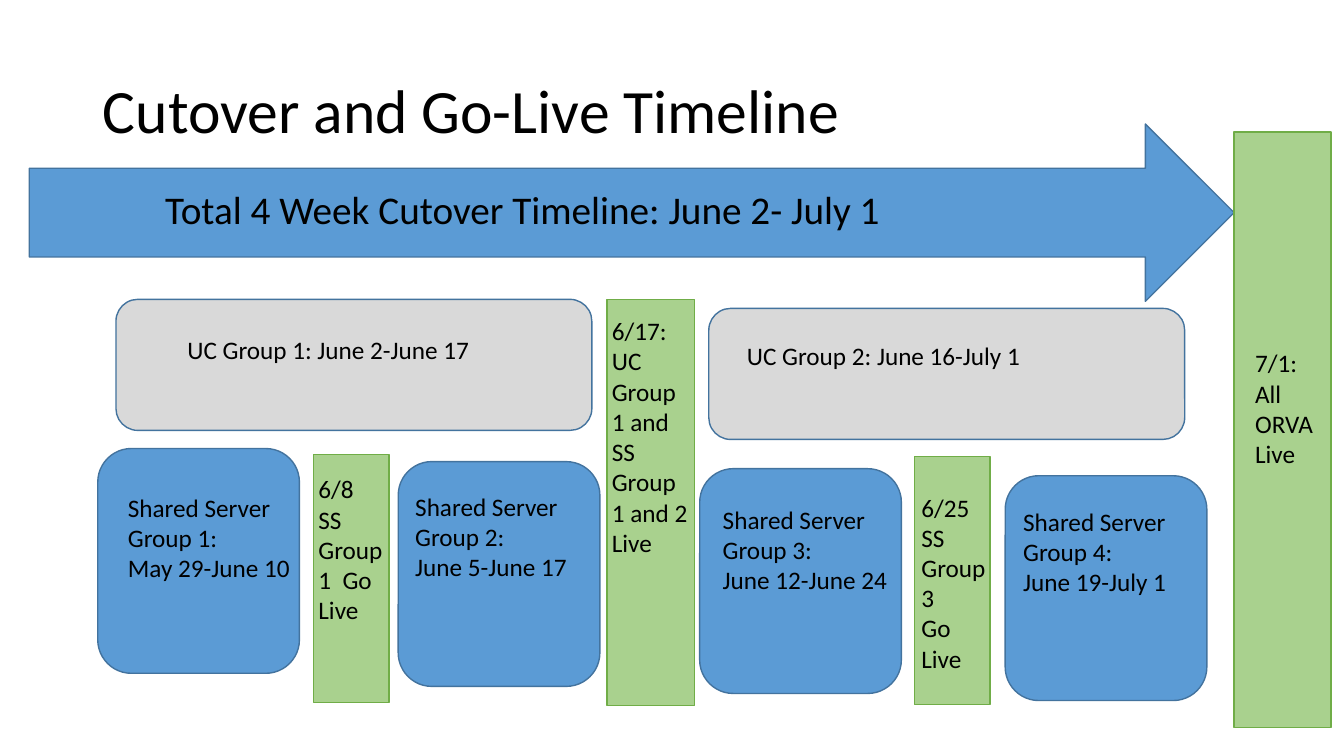
from pptx import Presentation
from pptx.dml.color import RGBColor as Rgb
from pptx.enum.shapes import MSO_SHAPE as Shape
from pptx.enum.text import MSO_ANCHOR as Anchor, PP_ALIGN as Align, MSO_AUTO_SIZE as Auto
from pptx.util import Inches, Pt

TITLE = "Cutover and Go-Live Timeline"
SPAN = ["Total 4 Week Cutover Timeline: June 2- July 1"]
GROUPS = [
    (1.15, 2.97, (1.76, 3.27), "UC Group 1: June 2-June 17"),
    (7.03, 3.06, (7.31, 3.33), "UC Group 2: June 16-July 1"),
]
SERVERS = [
    (0.97, 4.45, (1.17, 4.83, 1.91), "May 29-June 10"),
    (3.95, 4.58, (4.02, 4.82, 1.86), "June 5-June 17"),
    (6.94, 4.65, (7.07, 4.95, 1.86), "June 12-June 24"),
    (9.97, 4.72, (10.05, 4.97, 1.83), "June 19-July 1"),
]
LIVE = [
    ((6.02, 2.97, 0.87, 4.03), (5.97, 3.08, 0.99, 2.52),
     ["6/17:", "UC Group 1 and SS Group 1 and 2 Live"]),
    ((3.11, 4.51, 0.75, 2.46), (3.06, 4.65, 0.85, 1.62),
     ["6/8", "SS Group 1  Go Live"]),
    ((9.07, 4.53, 0.75, 2.46), (9.04, 4.83, 0.85, 1.92),
     ["6/25", "SS Group 3", "Go Live"]),
    ((12.24, 1.31, 0.96, 5.91), (12.35, 3.4, 0.99, 1.31),
     ["7/1:", "All ORVA Live"]),
]
THEME = {
    "font": "Calibri", "ink": "000000",
    "title": 44, "span": 28, "label": 18, "line": 1,
    "blue": ("5B9BD5", "43739E"),
    "gray": ("D9D9D9", "43739E"),
    "green": ("A9D18E", "70AD47"),
}


def style(item, form):
    for key, value in form.items():
        setattr(item, key, value)


def write(frame, lines, size):
    frame.text = "\n".join(lines)
    for para in frame.paragraphs:
        para.alignment = Align.LEFT
        for run in para.runs:
            style(run.font, {"name": THEME["font"], "size": Pt(THEME[size])})
            run.font.color.rgb = Rgb.from_string(THEME["ink"])


def block(slide, kind, box, tone):
    shape = slide.shapes.add_shape(kind, *map(Inches, box))
    fill, edge = THEME[tone]
    shape.shadow.inherit = False
    shape.fill.solid()
    shape.fill.fore_color.rgb = Rgb.from_string(fill)
    shape.line.color.rgb = Rgb.from_string(edge)
    shape.line.width = Pt(THEME["line"])


def label(slide, box, lines, size="label"):
    frame = slide.shapes.add_textbox(*map(Inches, box)).text_frame
    style(frame, {"word_wrap": True, "auto_size": Auto.SHAPE_TO_FIT_TEXT})
    write(frame, lines, size)


def main():
    deck = Presentation()
    style(deck, {"slide_width": Inches(13.33), "slide_height": Inches(7.5)})
    slide = deck.slides.add_slide(deck.slide_layouts[5])

    title = slide.shapes.title
    style(title, {"left": Inches(0.92), "top": Inches(0.4),
                  "width": Inches(11.5), "height": Inches(1.45)})
    write(title.text_frame, [TITLE], "title")
    title.text_frame.vertical_anchor = Anchor.MIDDLE
    title.text_frame.paragraphs[0].line_spacing = 0.9

    block(slide, Shape.RIGHT_ARROW, (0.29, 1.23, 11.95, 1.76), "blue")
    for left, top, _, _ in GROUPS:
        block(slide, Shape.ROUNDED_RECTANGLE, (left, top, 4.72, 1.3), "gray")
    for left, top, _, _ in SERVERS:
        block(slide, Shape.ROUNDED_RECTANGLE, (left, top, 2, 2.23), "blue")

    label(slide, (1.54, 1.79, 8.96, 0.57), SPAN, "span")
    for _, _, spot, text in GROUPS:
        label(slide, (*spot, 4.52, 0.4), [text])
    for num, (_, _, spot, dates) in enumerate(SERVERS, 1):
        label(slide, (*spot, 1.01), [f"Shared Server Group {num}:", dates])
    for bar, spot, lines in LIVE:
        block(slide, Shape.RECTANGLE, bar, "green")
        label(slide, spot, lines)

    deck.save("out.pptx")


if __name__ == "__main__":
    main()
